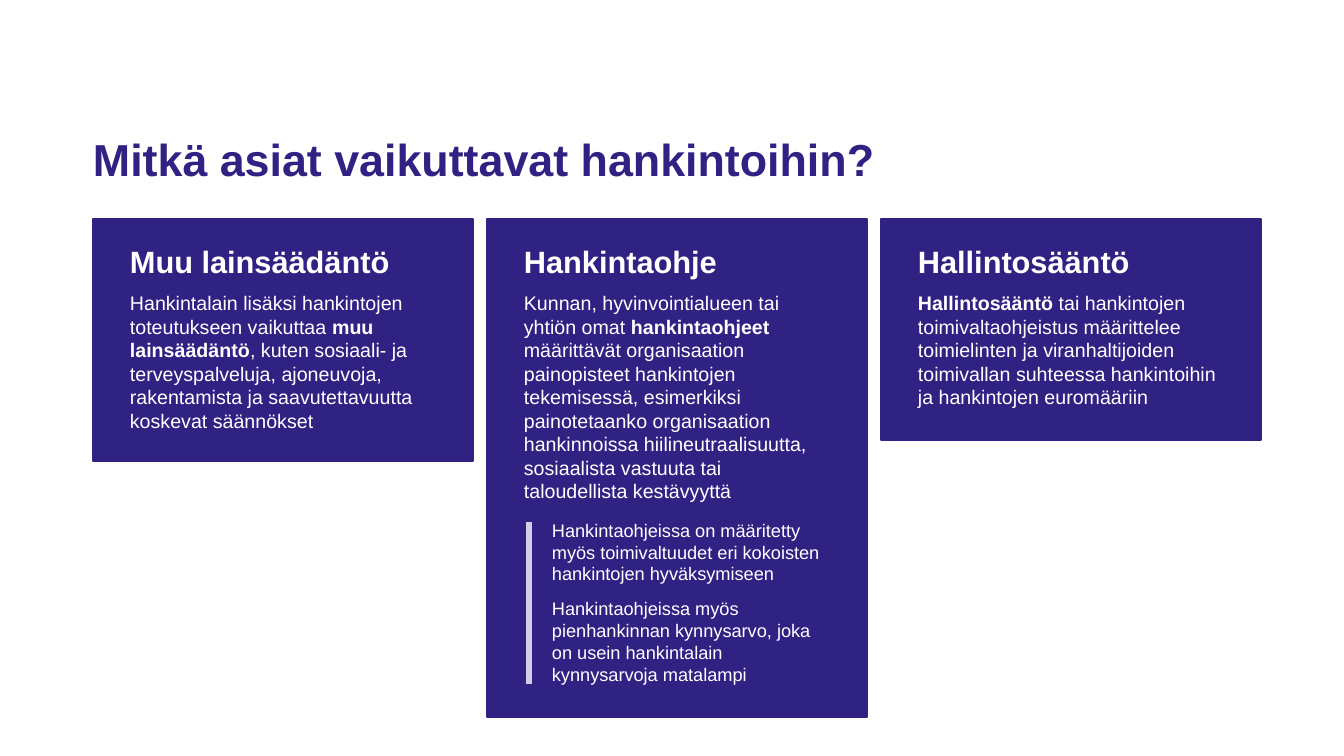
from lxml.etree import SubElement
from pptx import Presentation
from pptx.dml.color import RGBColor
from pptx.enum.shapes import MSO_CONNECTOR as CONNECTOR, MSO_SHAPE as SHAPE
from pptx.enum.text import MSO_ANCHOR as ANCHOR
from pptx.oxml.ns import qn
from pptx.util import Pt

TITLE = "Mitkä asiat vaikuttavat hankintoihin?"

# Each body is a list of (text, bold) runs.
CARDS = [
    {
        "heading": "Muu lainsäädäntö",
        "height": 242,
        "body": [
            ("Hankintalain lisäksi hankintojen toteutukseen vaikuttaa ", False),
            ("muu lainsäädäntö", True),
            (", kuten sosiaali- ja terveyspalveluja, ajoneuvoja, rakentamista "
             "ja saavutettavuutta koskevat säännökset", False),
        ],
        "notes": [],
    },
    {
        "heading": "Hankintaohje",
        "height": 498,
        "body": [
            ("Kunnan, hyvinvointialueen tai yhtiön omat ", False),
            ("hankintaohjeet", True),
            (" määrittävät organisaation painopisteet hankintojen tekemisessä, "
             "esimerkiksi painotetaanko organisaation hankinnoissa "
             "hiilineutraalisuutta, sosiaalista vastuuta tai taloudellista "
             "kestävyyttä", False),
        ],
        "notes": [
            "Hankintaohjeissa on määritetty myös toimivaltuudet eri kokoisten "
            "hankintojen hyväksymiseen",
            "Hankintaohjeissa myös pienhankinnan kynnysarvo, joka on usein "
            "hankintalain kynnysarvoja matalampi",
        ],
    },
    {
        "heading": "Hallintosääntö",
        "height": 221,
        "body": [
            ("Hallintosääntö", True),
            (" tai hankintojen toimivaltaohjeistus määrittelee toimielinten ja "
             "viranhaltijoiden toimivallan suhteessa hankintoihin ja "
             "hankintojen euromääriin", False),
        ],
        "notes": [],
    },
]

COLORS = {"purple": "302283", "lilac": "D2CDE7", "white": "FFFFFF"}
FONT = "Arial"

SLIDE_WIDTH, SLIDE_HEIGHT = 1344, 756
MARGIN = 93
CARD_TOP, CARD_WIDTH, CARD_GAP = 219, 380, 14
TEXT_INSET, TEXT_WIDTH = 27, 325
HEADING_TOP, HEADING_HEIGHT = 238, 47
BODY_TOP = HEADING_TOP + HEADING_HEIGHT + 1
NOTES_TOP, NOTES_INSET, NOTES_WIDTH, NOTES_HEIGHT = 514, 55, 291, 178
RULE_INSET, RULE_MARGIN = 42, 8


def px(length):
    """Turn px at 100.8 to the inch into EMU."""
    return round(length * 914400 / 100.8)


def color(name):
    return RGBColor.from_string(COLORS[name])


def add_text(slide, box, paragraphs, size, color_name="white", gap=0):
    """Add a text box; each paragraph is a list of (text, bold) runs."""
    frame = slide.shapes.add_textbox(*map(px, box)).text_frame
    frame.word_wrap = True
    for index, runs in enumerate(paragraphs):
        paragraph = frame.add_paragraph() if index else frame.paragraphs[0]
        if index:
            paragraph.space_before = Pt(gap)
        for text, bold in runs:
            run = paragraph.add_run()
            run.text = text
            run.font.name = FONT
            run.font.size = Pt(size)
            run.font.bold = bold
            run.font.color.rgb = color(color_name)
    return frame


def add_title(slide):
    box = (MARGIN, 40, SLIDE_WIDTH - 2 * MARGIN, 146)
    frame = add_text(slide, box, [[(TITLE, True)]], 32, "purple")
    frame.vertical_anchor = ANCHOR.BOTTOM
    frame.margin_left = frame.margin_right = 0
    frame.margin_top = frame.margin_bottom = 0
    frame.paragraphs[0].line_spacing = 0.9


def add_notes(slide, left, notes):
    """Add the smaller notes with the vertical rule beside them."""
    box = (left + NOTES_INSET, NOTES_TOP, NOTES_WIDTH, NOTES_HEIGHT)
    add_text(slide, box, [[(note, False)] for note in notes], 13, gap=9.2)
    x = px(left + RULE_INSET)
    top = px(NOTES_TOP + RULE_MARGIN)
    bottom = px(NOTES_TOP + NOTES_HEIGHT - RULE_MARGIN)
    rule = slide.shapes.add_connector(CONNECTOR.STRAIGHT, x, top, x, bottom)
    rule.line.color.rgb = color("lilac")
    rule.line.width = Pt(4.5)
    SubElement(rule._element.spPr, qn("a:effectLst"))


def add_card(slide, left, card):
    height = card["height"]
    panel = slide.shapes.add_shape(
        SHAPE.RECTANGLE, *map(px, (left, CARD_TOP, CARD_WIDTH, height)))
    panel.shadow.inherit = False
    panel.fill.solid()
    panel.fill.fore_color.rgb = color("purple")
    panel.line.color.rgb = color("purple")
    panel.line.width = Pt(1)

    text_left = left + TEXT_INSET
    heading_box = (text_left, HEADING_TOP, TEXT_WIDTH, HEADING_HEIGHT)
    add_text(slide, heading_box, [[(card["heading"], True)]], 22)
    body_bottom = NOTES_TOP if card["notes"] else CARD_TOP + height - 22
    body_box = (text_left, BODY_TOP, TEXT_WIDTH, body_bottom - BODY_TOP)
    add_text(slide, body_box, [card["body"]], 14)
    if card["notes"]:
        add_notes(slide, left, card["notes"])


def main():
    presentation = Presentation()
    presentation.slide_width = px(SLIDE_WIDTH)
    presentation.slide_height = px(SLIDE_HEIGHT)
    slide = presentation.slides.add_slide(presentation.slide_layouts[6])
    add_title(slide)
    for column, card in enumerate(CARDS):
        add_card(slide, MARGIN + column * (CARD_WIDTH + CARD_GAP), card)
    presentation.save("out.pptx")


if __name__ == "__main__":
    main()
